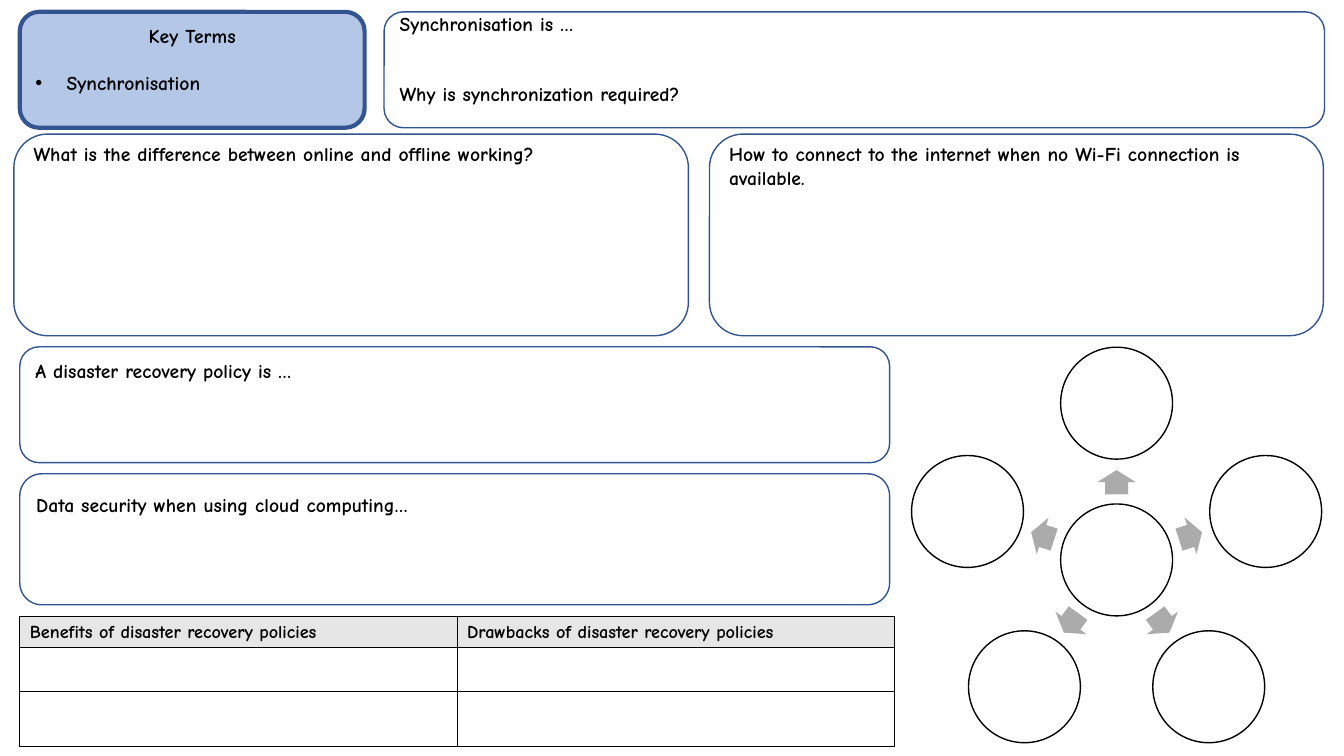
"""Build a revision sheet on syncing, disaster recovery and cloud security."""
from dataclasses import dataclass
from math import cos, radians, sin

from lxml.etree import SubElement
from pptx import Presentation
from pptx.dml.color import RGBColor
from pptx.enum.shapes import MSO_SHAPE
from pptx.enum.text import MSO_ANCHOR, PP_ALIGN
from pptx.oxml.ns import qn
from pptx.util import Cm, Pt


@dataclass(frozen=True)
class Theme:
    font: str = "Comic Neue"
    ink: str = "000000"
    edge: str = "325491"
    key: str = "B4C7E7"
    head: str = "E7E6E6"
    arrow: str = "ABABAB"
    paper: str = "FFFFFF"
    body: float = 14
    small: float = 13


@dataclass(frozen=True)
class Line:
    text: str
    gap: float = 0
    mid: bool = False
    dot: bool = False


@dataclass(frozen=True)
class Box:
    left: float
    top: float
    width: float
    height: float
    inset: float
    lines: tuple[Line, ...]
    fill: str | None = None
    edge: float = 1


@dataclass(frozen=True)
class Wheel:
    x: float
    y: float
    orbit: float
    reach: float
    size: float
    count: int


THEME = Theme()
BOXES = (
    Box(9.68, 0.3, 23.7, 2.92, -0.13, (
        Line("Synchronisation is …"),
        Line("Why is synchronization required?", gap=32.8))),
    Box(0.5, 0.3, 8.69, 2.92, 0.17, (
        Line("Key Terms", mid=True),
        Line("Synchronisation", gap=16.4, dot=True)), THEME.key, 3),
    Box(17.88, 3.38, 15.47, 5.08, -0.04, (
        Line("How to connect to the internet when no Wi-Fi connection is available."),)),
    Box(0.35, 3.38, 17, 5.08, -0.04, (
        Line("What is the difference between online and offline working?"),)),
    Box(0.5, 8.74, 21.92, 2.92, 0.17, (Line("A disaster recovery policy is …"),)),
    Box(0.5, 11.94, 21.92, 3.3, 0.33, (
        Line("Data security when using cloud computing…"),)),
)
HEADS = ("Benefits of disaster recovery policies",
         "Drawbacks of disaster recovery policies")
ROWS = (0.78, 1.1, 1.4)
WHEEL = Wheel(28.14, 14.11, 3.95, 1.96, 2.82, 5)


def tint(name: str) -> RGBColor:
    """Turn a hex name into a colour."""
    return RGBColor.from_string(name)


def paint(shape, fill: str | None, edge: str | None, width: float = 1) -> None:
    """Set the fill and outline of a shape."""
    shape.shadow.inherit = False
    if fill:
        shape.fill.solid()
        shape.fill.fore_color.rgb = tint(fill)
    else:
        shape.fill.background()
    if edge:
        shape.line.color.rgb = tint(edge)
        shape.line.width = Pt(width)
    else:
        shape.line.fill.background()


def write(para, text: str, size: float) -> None:
    """Add one styled run."""
    run = para.add_run()
    run.text = text
    font = run.font
    font.name, font.size, font.bold = THEME.font, Pt(size), True
    font.color.rgb = tint(THEME.ink)


def add_dot(para) -> None:
    """Give a paragraph a hanging bullet."""
    props = para._p.get_or_add_pPr()
    props.set("marL", str(Cm(0.79)))
    props.set("indent", str(Cm(-0.79)))
    SubElement(props, qn("a:buFont")).set("typeface", "Arial")
    SubElement(props, qn("a:buChar")).set("char", "•")


def draw_box(shapes, box: Box) -> None:
    """Draw a rounded box with its lines of text."""
    shape = shapes.add_shape(MSO_SHAPE.ROUNDED_RECTANGLE, Cm(box.left), Cm(box.top),
                             Cm(box.width), Cm(box.height))
    paint(shape, box.fill, THEME.edge, box.edge)
    frame = shape.text_frame
    frame.word_wrap = True
    frame.vertical_anchor = MSO_ANCHOR.TOP
    frame.margin_top, frame.margin_bottom = Cm(box.inset), Cm(0)
    for spot, line in enumerate(box.lines):
        para = frame.add_paragraph() if spot else frame.paragraphs[0]
        para.alignment = PP_ALIGN.CENTER if line.mid else PP_ALIGN.LEFT
        para.space_before = Pt(line.gap)
        if line.dot:
            add_dot(para)
        write(para, line.text, THEME.body)


def frame_cell(cell) -> None:
    """Rule all four sides of a cell."""
    props = cell._tc.get_or_add_tcPr()
    for spot, side in enumerate(("lnL", "lnR", "lnT", "lnB")):
        rule = props.makeelement(qn(f"a:{side}"), {"w": str(Pt(1))})
        fill = SubElement(rule, qn("a:solidFill"))
        SubElement(fill, qn("a:srgbClr")).set("val", THEME.ink)
        props.insert(spot, rule)


def draw_table(shapes) -> None:
    """Draw the table of benefits and drawbacks."""
    table = shapes.add_table(len(ROWS), len(HEADS), Cm(0.5), Cm(15.54),
                             Cm(22.04), Cm(sum(ROWS))).table
    for row, height in zip(table.rows, ROWS):
        row.height = Cm(height)
    for cell in table.iter_cells():
        cell.fill.solid()
        cell.fill.fore_color.rgb = tint(THEME.paper)
        frame_cell(cell)
    for spot, text in enumerate(HEADS):
        cell = table.cell(0, spot)
        cell.fill.fore_color.rgb = tint(THEME.head)
        write(cell.text_frame.paragraphs[0], text, THEME.small)


def place(shapes, kind: MSO_SHAPE, x: float, y: float, width: float, height: float):
    """Add a shape by its centre."""
    return shapes.add_shape(kind, Cm(x - width / 2), Cm(y - height / 2),
                            Cm(width), Cm(height))


def draw_disc(shapes, x: float, y: float, size: float) -> None:
    """Draw one blank circle."""
    paint(place(shapes, MSO_SHAPE.OVAL, x, y, size, size), THEME.paper, THEME.ink)


def draw_wheel(shapes, wheel: Wheel) -> None:
    """Draw a hub with arrows out to a ring of circles."""
    draw_disc(shapes, wheel.x, wheel.y, wheel.size)
    for step in range(wheel.count):
        turn = 270 + step * 360 / wheel.count
        across, down = cos(radians(turn)), sin(radians(turn))
        arrow = place(shapes, MSO_SHAPE.RIGHT_ARROW, wheel.x + wheel.reach * across,
                      wheel.y + wheel.reach * down, 0.61, 0.97)
        arrow.adjustments[0], arrow.adjustments[1] = 0.6, 0.5
        arrow.rotation = turn % 360
        paint(arrow, THEME.arrow, None)
        draw_disc(shapes, wheel.x + wheel.orbit * across,
                  wheel.y + wheel.orbit * down, wheel.size)


def main() -> None:
    """Build and save the slide."""
    deck = Presentation()
    deck.slide_width, deck.slide_height = Cm(33.87), Cm(19.05)
    shapes = deck.slides.add_slide(deck.slide_layouts[6]).shapes
    for box in BOXES:
        draw_box(shapes, box)
    draw_table(shapes)
    draw_wheel(shapes.add_group_shape().shapes, WHEEL)
    deck.save("out.pptx")


if __name__ == "__main__":
    main()
